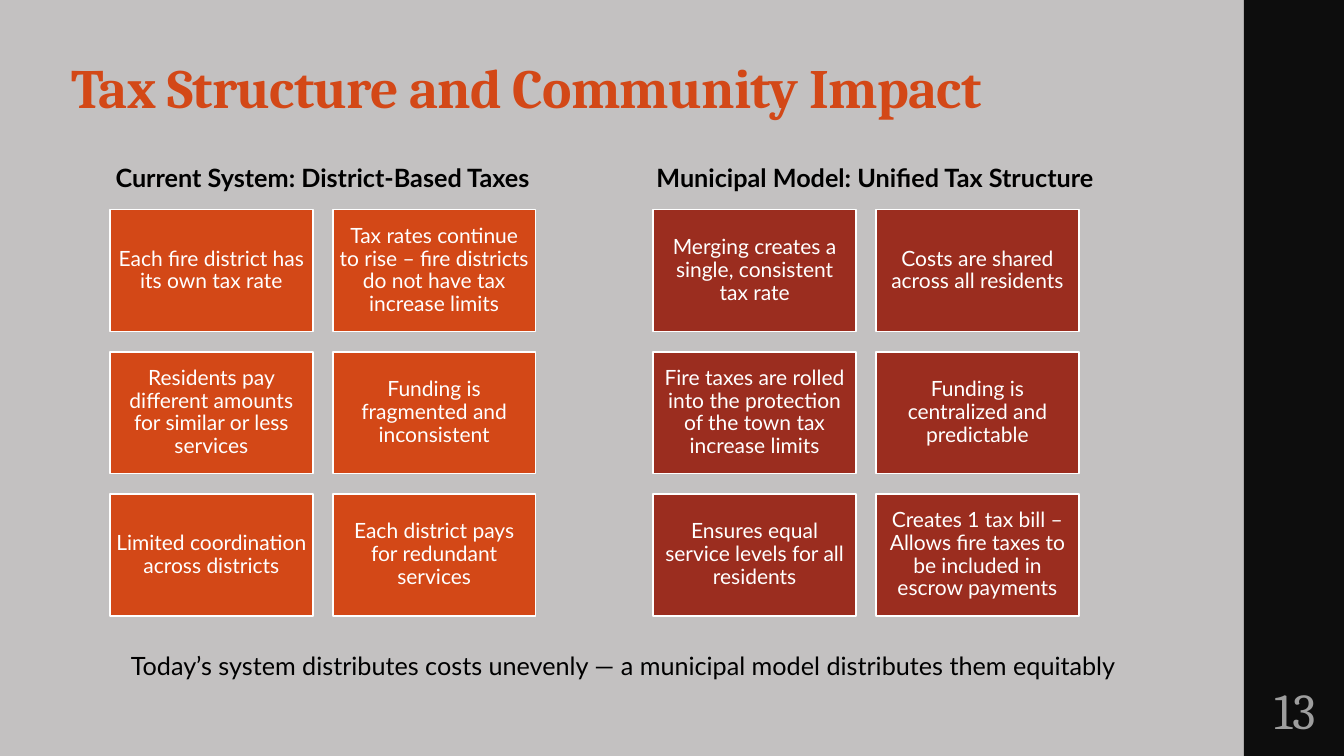
import pptx
import pptx.util
import pptx.dml.color
import pptx.enum.shapes
import pptx.enum.text
import pptx.oxml.ns
from lxml import etree

RGBColor = pptx.dml.color.RGBColor
PP_ALIGN = pptx.enum.text.PP_ALIGN
MSO_ANCHOR = pptx.enum.text.MSO_ANCHOR

ORANGE = RGBColor(0xD3, 0x48, 0x17)
BRICK = RGBColor(0x9B, 0x2D, 0x1F)
GRAY = RGBColor(0xC3, 0xC1, 0xC1)
NEAR_BLACK = RGBColor(0x0D, 0x0D, 0x0D)
BLACK = RGBColor(0, 0, 0)
WHITE = RGBColor(0xFF, 0xFF, 0xFF)

SLIDE_W = pptx.util.Inches(13.333)
SLIDE_H = pptx.util.Inches(7.5)

CARD_TOP, CARD_W, CARD_H = 27.73, 15.1, 16.13
COL_PITCH, ROW_PITCH = 16.58, 18.8
CARD_COLS = 2

CURRENT_SYSTEM = [
    "Each fire district has its own tax rate",
    "Tax rates continue to rise – fire districts do not have tax increase limits",
    "Residents pay different amounts for similar or less services",
    "Funding is fragmented and inconsistent",
    "Limited coordination across districts",
    "Each district pays for redundant services",
]
MUNICIPAL_MODEL = [
    "Merging creates a single, consistent tax rate",
    "Costs are shared across all residents",
    "Fire taxes are rolled into the protection of the town tax increase limits",
    "Funding is centralized and predictable",
    "Ensures equal service levels for all residents",
    "Creates 1 tax bill – Allows fire taxes to be included in escrow payments",
]


def percent_box(left, top, width, height):
    return (round(SLIDE_W * left / 100), round(SLIDE_H * top / 100),
            round(SLIDE_W * width / 100), round(SLIDE_H * height / 100))


def set_text(sp, text, size, font, color, bold=False, align=PP_ALIGN.LEFT,
             anchor=MSO_ANCHOR.TOP, spacing=1.0, inset=None):
    tf = sp.text_frame
    tf.word_wrap = True
    tf.vertical_anchor = anchor
    if inset is not None:
        tf.margin_left = tf.margin_right = pptx.util.Inches(inset)
        tf.margin_top = tf.margin_bottom = pptx.util.Inches(inset)
    p = tf.paragraphs[0]
    r = p.add_run()
    r.text = text
    p.alignment = align
    p.line_spacing = spacing
    p.font.size = pptx.util.Pt(size)
    p.font.name = font
    p.font.bold = bold
    p.font.color.rgb = color
    return r


def add_text(s, box, text, size, font, color, **style):
    sp = s.shapes.add_textbox(*percent_box(*box))
    return set_text(sp, text, size, font, color, **style)


def add_rect(s, box, fill, line=None):
    sp = s.shapes.add_shape(pptx.enum.shapes.MSO_SHAPE.RECTANGLE, *percent_box(*box))
    sp.shadow.inherit = False
    sp.fill.solid()
    sp.fill.fore_color.rgb = fill
    if line is None:
        sp.line.fill.background()
    else:
        sp.line.color.rgb = line
        sp.line.width = pptx.util.Pt(1.1)
    return sp


def add_cards(s, left, texts, fill):
    for i, text in enumerate(texts):
        row, col = divmod(i, CARD_COLS)
        box = (left + col * COL_PITCH, CARD_TOP + row * ROW_PITCH, CARD_W, CARD_H)
        sp = add_rect(s, box, fill, WHITE)
        set_text(sp, text, 15, "Lato", WHITE, align=PP_ALIGN.CENTER,
                 anchor=MSO_ANCHOR.MIDDLE, spacing=0.9, inset=0.06)


def add_title(s, text):
    r = add_text(s, (4.58, 4.27, 85.28, 12.27), text, 39.6, "Cambria", ORANGE,
                 bold=True, anchor=MSO_ANCHOR.BOTTOM, spacing=0.9)
    r.font.bold = True
    r._r.get_or_add_rPr().set("spc", "-50")


def add_page_number(s, text):
    add_rect(s, (92.55, 0, 7.45, 100), NEAR_BLACK)
    r = add_text(s, (92.6, 90, 7.5, 8.67), text, 36, "Cambria", WHITE,
                 align=PP_ALIGN.CENTER, anchor=MSO_ANCHOR.MIDDLE,
                 spacing=0.9, inset=0.05)
    r.font.color.rgb = WHITE
    qn = pptx.oxml.ns.qn
    color = r._r.rPr.find(qn("a:solidFill")).find(qn("a:srgbClr"))
    etree.SubElement(color, qn("a:alpha")).set("val", "60000")


def add_model(s, heading, heading_box, cards_left, texts, fill):
    add_text(s, heading_box, heading, 18, "Lato", BLACK, bold=True,
             align=PP_ALIGN.CENTER)
    add_cards(s, cards_left, texts, fill)


def main():
    prs = pptx.Presentation()
    prs.slide_width, prs.slide_height = SLIDE_W, SLIDE_H
    s = prs.slides.add_slide(prs.slide_layouts[6])
    s.background.fill.solid()
    s.background.fill.fore_color.rgb = GRAY

    add_title(s, "Tax Structure and Community Impact")
    add_page_number(s, "13")
    add_model(s, "Current System: District-Based Taxes",
              (3.75, 20.8, 40.5, 5.33), 8.18, CURRENT_SYSTEM, ORANGE)
    add_model(s, "Municipal Model: Unified Tax Structure",
              (45.3, 20.8, 39.6, 5.33), 48.6, MUNICIPAL_MODEL, BRICK)
    add_text(s, (9, 85.33, 75.9, 9.47),
             "Today’s system distributes costs unevenly — "
             "a municipal model distributes them equitably",
             18, "Lato", BLACK)
    prs.save("out.pptx")


if __name__ == "__main__":
    main()
